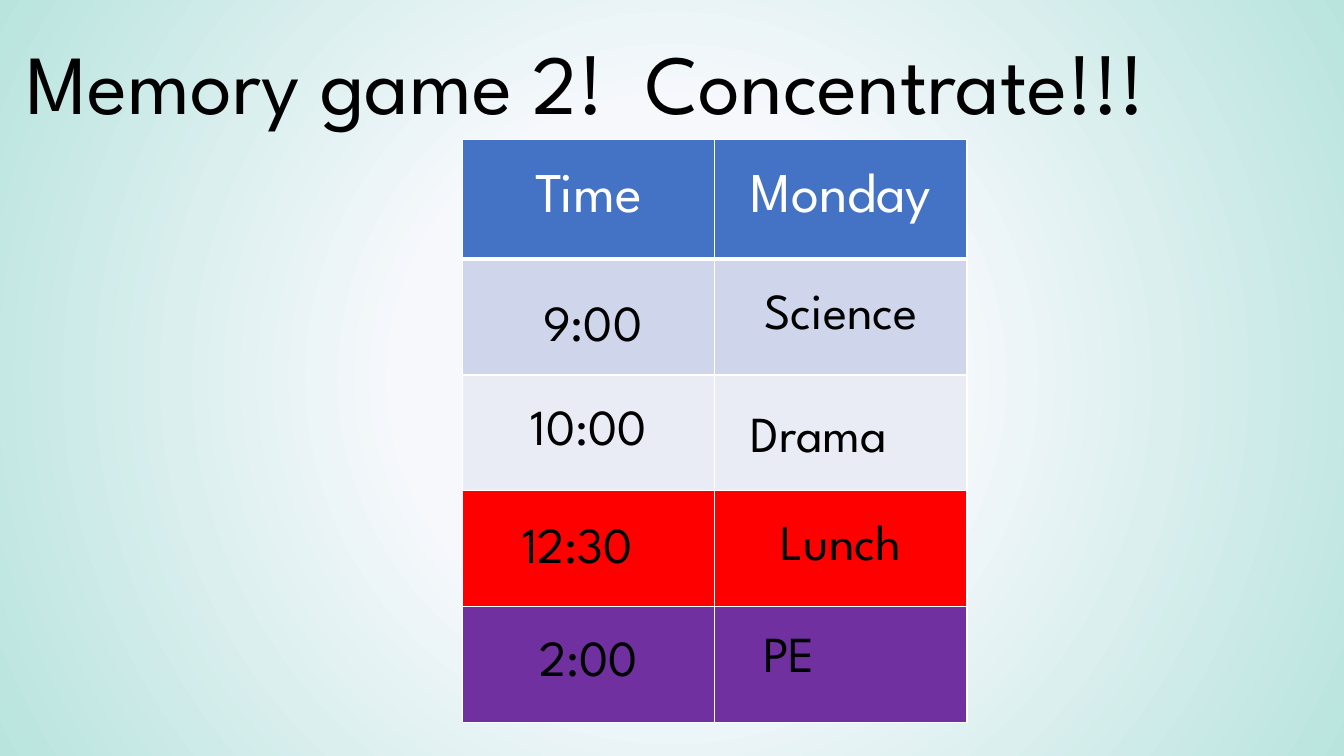
from pptx import Presentation
from pptx.dml.color import RGBColor
from pptx.enum.text import MSO_ANCHOR, MSO_AUTO_SIZE, PP_ALIGN
from pptx.oxml import parse_xml
from pptx.oxml.ns import nsdecls, qn
from pptx.util import Inches, Pt

BLACK, WHITE = "000000", "FFFFFF"


def color(value):
    return RGBColor.from_string(value)


class TimetableSlide:
    font_name = "League Spartan"

    def __init__(self, deck):
        self.page = deck.slides.add_slide(deck.slide_layouts[5])

    def add_text(self, frame, text, size, ink=BLACK, align=PP_ALIGN.LEFT):
        para = frame.paragraphs[0]
        para.alignment = align
        span = para.add_run()
        span.text = text
        values = {"name": self.font_name, "size": Pt(size), "bold": False}
        for name, value in values.items():
            setattr(span.font, name, value)
        span.font.color.rgb = color(ink)

    def background(self, center, edge):
        fill = parse_xml(
            f'<p:bg {nsdecls("p", "a")}><p:bgPr><a:gradFill rotWithShape="1"><a:gsLst>'
            f'<a:gs pos="35000"><a:srgbClr val="{center}"/></a:gs>'
            f'<a:gs pos="100000"><a:srgbClr val="{edge}"/></a:gs></a:gsLst>'
            '<a:path path="circle"><a:fillToRect l="50000" t="50000" r="50000" b="50000"/>'
            '</a:path></a:gradFill><a:effectLst/></p:bgPr></p:bg>')
        self.page.element.find(qn("p:cSld")).insert(0, fill)

    def title(self, text, left, top, width, height):
        box = self.page.shapes.title
        places = {"left": left, "top": top, "width": width, "height": height}
        for name, value in places.items():
            setattr(box, name, Inches(value))
        frame = box.text_frame
        values = {"word_wrap": True, "auto_size": MSO_AUTO_SIZE.NONE,
                  "vertical_anchor": MSO_ANCHOR.TOP}
        for name, value in values.items():
            setattr(frame, name, value)
        self.add_text(frame, text, 60)

    def label(self, text, left, top, width):
        box = self.page.shapes.add_textbox(
            Inches(left), Inches(top), Inches(width), Inches(0.71))
        box.text_frame.word_wrap = False
        self.add_text(box.text_frame, text, 36)

    def borders(self, cell, widths):
        properties = cell._tc.get_or_add_tcPr()
        for side, width in widths.items():
            properties.append(parse_xml(
                f'<a:ln{side} {nsdecls("a")} w="{Pt(width)}"><a:solidFill>'
                f'<a:srgbClr val="{WHITE}"/></a:solidFill></a:ln{side}>'))

    def table(self, rows, left, top, column_width, heights):
        table = self.page.shapes.add_table(
            len(rows), 2, Inches(left), Inches(top),
            Inches(2 * column_width), Inches(sum(heights))).table
        for column in table.columns:
            column.width = Inches(column_width)
        for number, (fill, texts) in enumerate(rows):
            table.rows[number].height = Inches(heights[number])
            header = number == 0
            for cell, text in zip(table.rows[number].cells, texts):
                # The rule under the header is thicker than the rest
                self.borders(cell, {"L": 1, "R": 1, "T": 3 if number == 1 else 1,
                                    "B": 3 if header else 1})
                cell.fill.solid()
                cell.fill.fore_color.rgb = color(fill)
                cell.vertical_anchor = MSO_ANCHOR.MIDDLE
                if text:
                    self.add_text(cell.text_frame, text, 40 if header else 36,
                                  WHITE if header else BLACK, PP_ALIGN.CENTER)


def main():
    deck = Presentation()
    deck.slide_width, deck.slide_height = Inches(13.33), Inches(7.5)
    slide = TimetableSlide(deck)
    slide.background("F6F8FC", "B9E4DE")

    # Timetable with gaps
    slide.table([
        ("4472C4", ("Time", "Monday")),
        ("CFD5EA", ("", "Science")),
        ("E9EBF5", ("10:00", "")),
        ("FF0000", ("", "Lunch")),
        ("7030A0", ("2:00", "")),
    ], 4.59, 1.38, 2.5, [1.19] + 4 * [1.15])

    # Heading
    slide.title("Memory game 2!  Concentrate!!!", 0.16, 0.25, 13.17, 1.11)

    # Answers laid over the gaps
    for answer in [("9:00", 5.29, 2.84, 1.26), ("Drama", 7.35, 3.94, 1.83),
                   ("12:30", 5.08, 5.04, 1.56), ("PE", 7.47, 6.12, 1)]:
        slide.label(*answer)

    deck.save("out.pptx")


if __name__ == "__main__":
    main()
